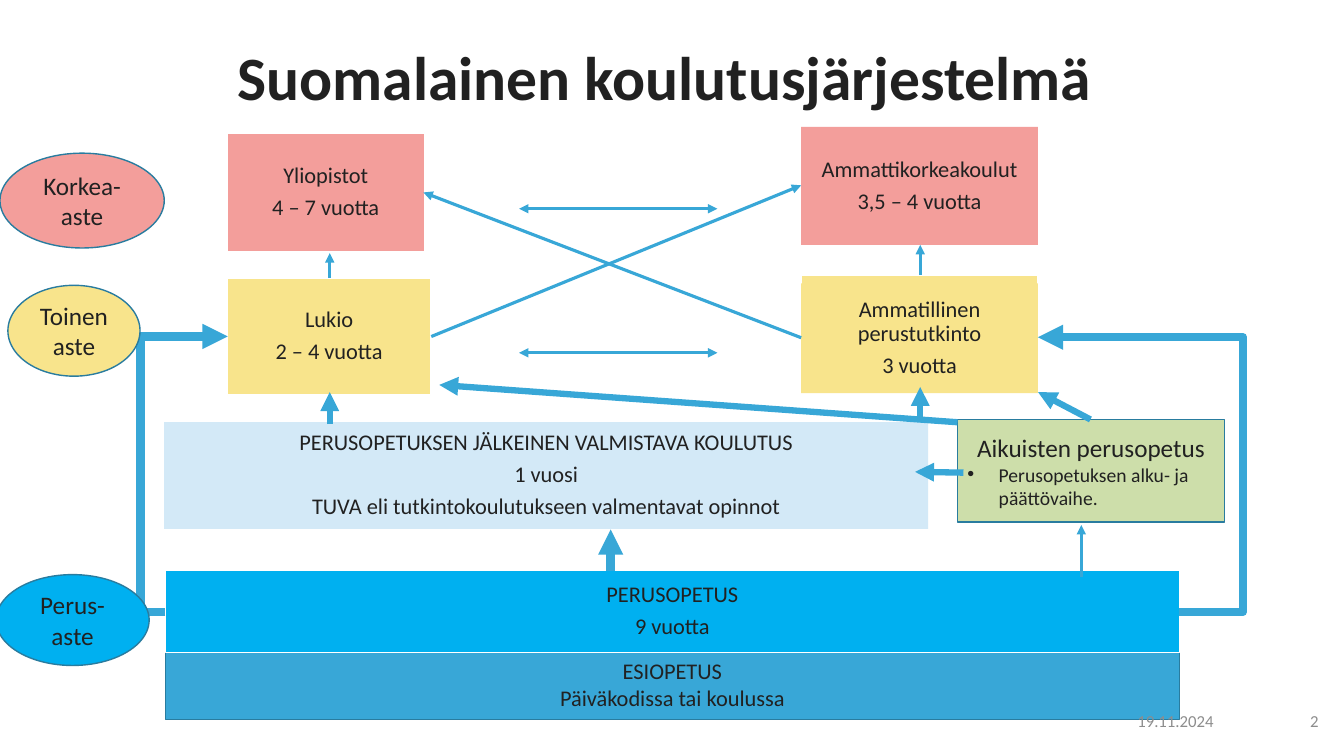
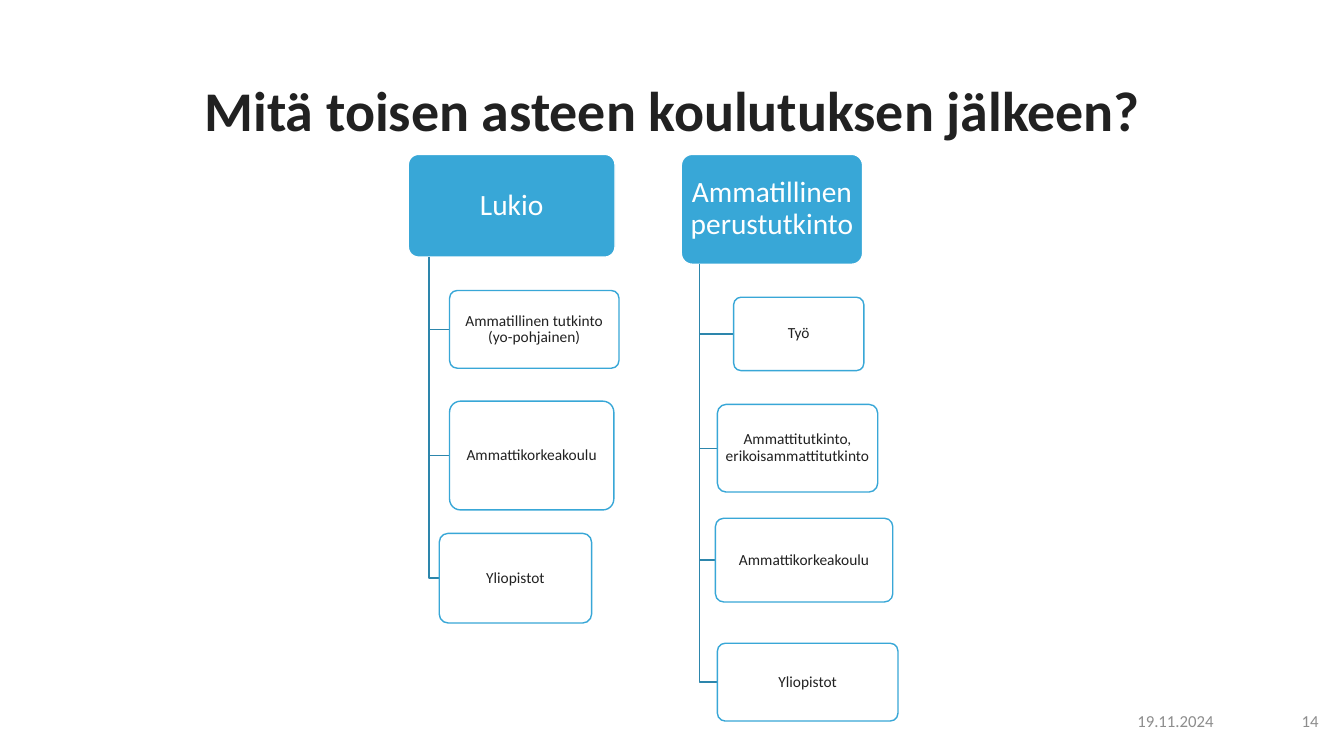
import pptx
import pptx.util
import pptx.dml.color
import pptx.enum.shapes
import pptx.enum.text
import pptx.oxml.ns
import lxml.etree

Cm = pptx.util.Cm
Pt = pptx.util.Pt
hue = pptx.dml.color.RGBColor.from_string
qn = pptx.oxml.ns.qn
forms = pptx.enum.shapes.MSO_SHAPE
joints = pptx.enum.shapes.MSO_CONNECTOR
aligns = pptx.enum.text.PP_ALIGN

FONT = "Calibri"
DARK = "212121"
GREY = "8D8D8D"
WHITE = "FFFFFF"
BLUE = "38A7D7"
EDGE = "297C9F"
TWIG = "2D86AC"
SKY = "00B0F0"
PALE = "D3E9F7"
ROSE = "F39E9B"
GOLD = "F8E48C"
GREEN = "CDDEAA"


def box(slide, form, place, lines, size, fill=None, edge=None, ink=DARK,
        pad=(0.25, 0.13), lead=1.0, gap=0, bold=False, align=aligns.CENTER):
    place = [Cm(value) for value in place]
    if form is None:
        shape = slide.shapes.add_textbox(*place)
    else:
        shape = slide.shapes.add_shape(form, *place)
        shape.shadow.inherit = False
        if form == forms.ROUNDED_RECTANGLE:
            shape.adjustments[0] = 0.1
    if fill:
        shape.fill.solid()
        shape.fill.fore_color.rgb = hue(fill)
    else:
        shape.fill.background()
    if edge:
        shape.line.color.rgb = hue(edge)
        shape.line.width = Pt(1)
    else:
        shape.line.fill.background()
    frame = shape.text_frame
    frame.word_wrap = True
    frame.vertical_anchor = pptx.enum.text.MSO_ANCHOR.MIDDLE
    frame.margin_left = frame.margin_right = Cm(pad[0])
    frame.margin_top = frame.margin_bottom = Cm(pad[1])
    frame.text = "\n".join(lines)
    for para in frame.paragraphs:
        para.alignment = align
        para.line_spacing = lead
        para.space_after = Pt(size * gap)
        for run in para.runs:
            run.font.name = FONT
            run.font.size = Pt(size)
            run.font.bold = bold
            run.font.color.rgb = hue(ink)
    return shape


def link(slide, ends, width, both=False, bend=None):
    kind = joints.STRAIGHT if bend is None else joints.ELBOW
    line = slide.shapes.add_connector(kind, *[Cm(value) for value in ends])
    line.line.color.rgb = hue(BLUE)
    line.line.width = Pt(width)
    prop = line._element.spPr
    stroke = prop.find(qn("a:ln"))
    for tag in ["a:headEnd", "a:tailEnd"] if both else ["a:tailEnd"]:
        lxml.etree.SubElement(stroke, qn(tag), type="triangle")
    lxml.etree.SubElement(prop, qn("a:effectLst"))
    if bend is not None:
        guides = prop.find(qn("a:prstGeom")).get_or_add_avLst()
        lxml.etree.SubElement(guides, qn("a:gd"), name="adj1",
                              fmla=f"val {round(bend * 100000)}")


deck = pptx.Presentation()
deck.slide_width = Cm(33.87)
deck.slide_height = Cm(19.05)

heads = [
    ("Suomalainen koulutusjärjestelmä ", 44, 2.03),
    ("Mitä toisen asteen koulutuksen jälkeen?", 40, 3.68),
]
for title, size, height in heads:
    slide = deck.slides.add_slide(deck.slide_layouts[6])
    box(slide, None, (2.34, 1.02, 29.21, height), [title], size,
        lead=0.9, bold=True)
system, paths = deck.slides

box(system, forms.RECTANGLE, (4.17, 16.33, 25.55, 1.8),
    ["ESIOPETUS", "Päiväkodissa tai koulussa"], 16, BLUE, EDGE)

stages = [
    ((4.17, 14.38, 25.55, 2.06), SKY, WHITE, ["PERUSOPETUS", "9 vuotta"]),
    ((4.14, 10.64, 19.25, 2.69), PALE, None,
     ["PERUSOPETUKSEN JÄLKEINEN VALMISTAVA KOULUTUS", "1 vuosi",
      "TUVA eli tutkintokoulutukseen valmentavat opinnot"]),
    ((5.74, 7.01, 5.11, 2.95), GOLD, WHITE, ["Lukio", "2 – 4 vuotta"]),
    ((20.19, 6.93, 5.97, 2.77), GOLD, WHITE, []),
    ((20.19, 7.14, 5.97, 2.77), GOLD, None,
     ["Ammatillinen perustutkinto", "3 vuotta"]),
    ((5.72, 3.35, 4.98, 3), ROSE, WHITE, ["Yliopistot", "4 – 7 vuotta"]),
    ((20.19, 3.2, 5.97, 2.97), ROSE, None,
     ["Ammattikorkeakoulut", "3,5 – 4 vuotta"]),
]
for place, fill, edge, lines in stages:
    box(system, forms.RECTANGLE, place, lines, 16, fill, edge,
        pad=(0.18, 0.18), lead=0.9, gap=0.35)

link(system, (29.72, 15.42, 26.16, 8.5), 6, bend=-0.45)
link(system, (4.17, 15.42, 5.74, 8.48), 6, bend=-0.4)

levels = [
    ((0, 3.86, 4.14, 2.39), ROSE, "Korkea-aste"),
    ((0.2, 7.19, 3.33, 2.29), GOLD, "Toinen aste"),
    ((-0.1, 14.48, 3.86, 2.29), SKY, "Perus-aste"),
]
for place, fill, text in levels:
    box(system, forms.OVAL, place, [text], 18, fill, EDGE)

adult = box(system, forms.RECTANGLE, (24.13, 10.57, 6.73, 2.59),
            ["Aikuisten perusopetus", "Perusopetuksen alku- ja päättövaihe."],
            18, GREEN, EDGE)
point = adult.text_frame.paragraphs[1]
point.alignment = aligns.LEFT
prop = point._p.get_or_add_pPr()
prop.set("marL", str(Cm(0.79)))
prop.set("indent", str(-Cm(0.79)))
lxml.etree.SubElement(prop, qn("a:buFont"), typeface="Arial")
lxml.etree.SubElement(prop, qn("a:buChar"), char="•")
point.runs[0].font.size = Pt(14)

for y in (5.26, 8.89):
    link(system, (13.08, y, 18.08, y), 2.25, both=True)

arrows = [
    (2.25, (8.31, 7.01, 8.31, 6.38)),
    (2.25, (23.19, 6.93, 23.19, 6.17)),
    (2.25, (10.87, 8.48, 20.19, 4.67)),
    (2.25, (20.19, 8.51, 10.67, 4.85)),
    (2.25, (27.25, 14.55, 27.25, 13.23)),
    (4.5, (8.31, 10.69, 8.31, 9.88)),
    (4.5, (23.19, 10.64, 23.19, 9.75)),
    (4.5, (24.28, 11.91, 23.06, 11.89)),
    (4.5, (27.48, 10.57, 26.16, 9.88)),
    (4.5, (24.13, 10.64, 11.07, 9.7)),
    (6, (15.39, 14.38, 15.39, 13.34)),
]
for width, ends in arrows:
    link(system, ends, width)

trees = [
    ("Lukio", (10.29, 3.89, 5.21, 2.59), [
        ("Ammatillinen tutkinto (yo-pohjainen)", (11.33, 7.32, 4.27, 1.96)),
        ("Ammattikorkeakoulu", (11.33, 10.11, 4.14, 2.74)),
        ("Yliopistot", (11.07, 13.44, 3.84, 2.26)),
    ]),
    ("Ammatillinen perustutkinto", (17.17, 3.89, 4.57, 2.77), [
        ("Työ", (18.49, 7.49, 3.28, 1.85)),
        ("Ammattitutkinto, erikoisammattitutkinto",
         (18.08, 10.19, 4.04, 2.21)),
        ("Ammattikorkeakoulu", (18.03, 13.06, 4.47, 2.11)),
        ("Yliopistot", (18.08, 16.21, 4.55, 1.96)),
    ]),
]
for root, place, leaves in trees:
    box(paths, forms.ROUNDED_RECTANGLE, place, [root], 21, BLUE, WHITE, WHITE,
        pad=(0.1, 0.08), lead=0.9, gap=0.35)
    left, top, width, height = place
    trunk = Cm(left + width / 10)
    for leaf, spot in leaves:
        mid = Cm(spot[1] + spot[3] / 2)
        pen = paths.shapes.build_freeform(trunk, Cm(top + height))
        pen.add_line_segments([(trunk, mid), (Cm(spot[0]), mid)], close=False)
        twig = pen.convert_to_shape()
        twig.shadow.inherit = False
        twig.fill.background()
        twig.line.color.rgb = hue(TWIG)
        twig.line.width = Pt(1)
        box(paths, forms.ROUNDED_RECTANGLE, spot, [leaf], 11, WHITE, BLUE,
            pad=(0.05, 0.05), lead=0.9, gap=0.35)

for slide, page in zip(deck.slides, ("2", "14")):
    for text, left, width in ((page, 31.12, 2.36), ("19.11.2024", 27.79, 3.05)):
        box(slide, None, (left, 17.65, width, 1.02), [text], 12, ink=GREY,
            align=aligns.RIGHT)

deck.save("out.pptx")
